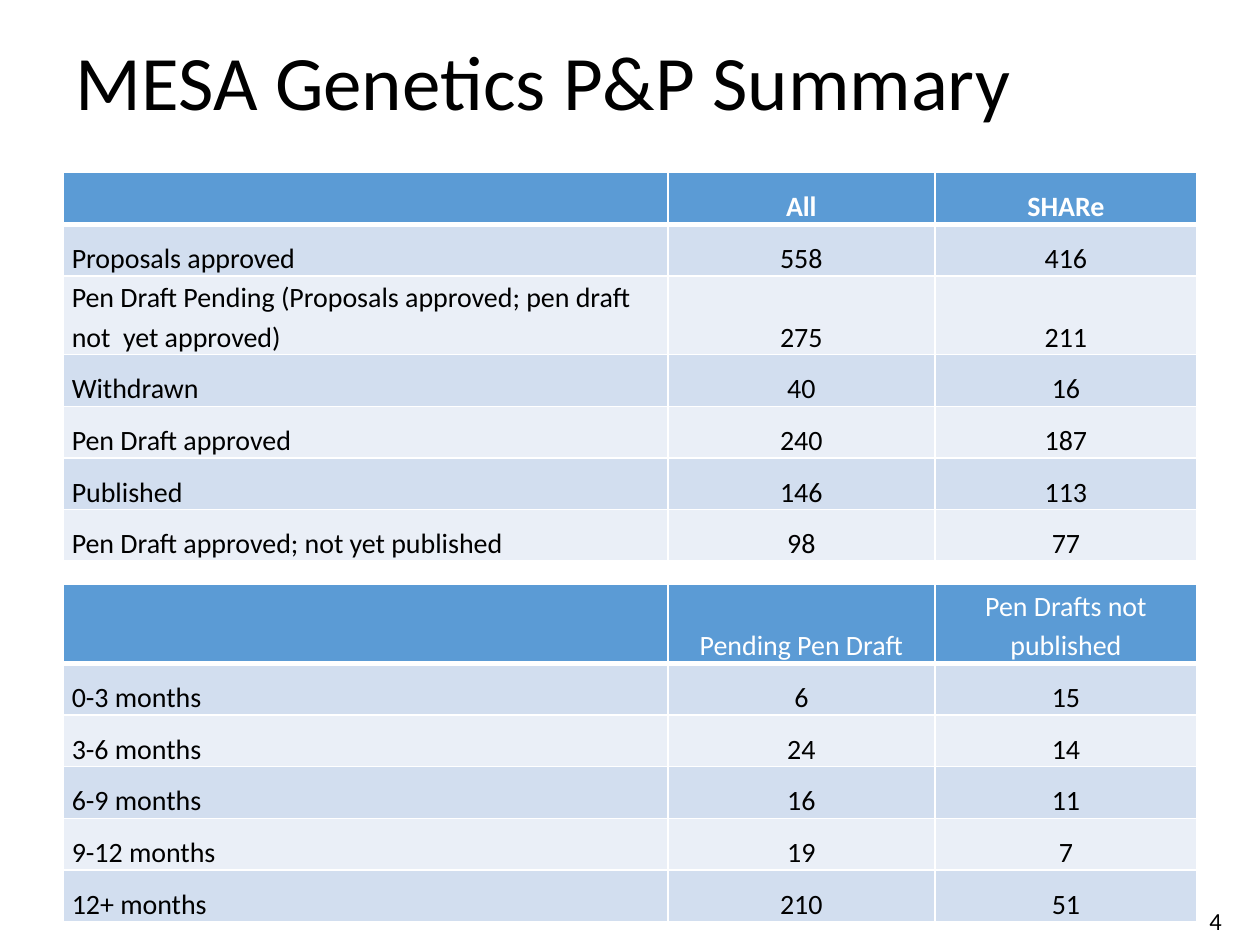
from dataclasses import dataclass

from lxml.etree import SubElement
from pptx import Presentation
from pptx.dml.color import RGBColor
from pptx.enum.text import MSO_ANCHOR, PP_ALIGN
from pptx.oxml.ns import qn
from pptx.util import Inches, Pt

# Content
TITLE = "MESA Genetics P&P Summary"
PAGE_NUMBER = "4"
STATUS_ROWS = [
    ("", "All", "SHARe"),
    ("Proposals approved", "558", "416"),
    ("Pen Draft Pending (Proposals approved; pen draft not  yet approved)", "275", "211"),
    ("Withdrawn", "40", "16"),
    ("Pen Draft approved", "240", "187"),
    ("Published", "146", "113"),
    ("Pen Draft approved; not yet published", "98", "77"),
]
AGE_ROWS = [
    ("", "Pending Pen Draft", "Pen Drafts not published"),
    ("0-3 months", "6", "15"),
    ("3-6 months", "24", "14"),
    ("6-9 months", "16", "11"),
    ("9-12 months", "19", "7"),
    ("12+ months", "210", "51"),
]


@dataclass(frozen=True)
class Theme:
    font: str = "Calibri"
    title_size: int = 44
    table_size: int = 16
    number_size: int = 14
    ink: str = "000000"
    paper: str = "FFFFFF"
    header: str = "5B9BD5"
    bands: tuple = ("D2DEEF", "EAEFF7")
    rule: int = 1
    header_rule: int = 3


THEME = Theme()

# Grid, in inches
MARGIN = 0.5
COLUMNS = (4.8, 2.12, 2.08)
ROW_HEIGHT = 0.41
TABLE_WIDTH = sum(COLUMNS)


def style_text(frame, size, color, bold=False):
    for para in frame.paragraphs:
        for span in para.runs:
            span.font.name = THEME.font
            span.font.size = Pt(size)
            span.font.bold = bold
            span.font.color.rgb = RGBColor.from_string(color)


def add_borders(cell, bottom_width):
    properties = cell._tc.get_or_add_tcPr()
    for side in ("lnL", "lnR", "lnT", "lnB"):
        width = bottom_width if side == "lnB" else THEME.rule
        line = SubElement(properties, qn(f"a:{side}"), w=str(Pt(width)))
        fill = SubElement(line, qn("a:solidFill"))
        SubElement(fill, qn("a:srgbClr"), val=THEME.paper)


def style_cell(cell, text, row, column, bold_header):
    is_header = row == 0
    add_borders(cell, THEME.header_rule if is_header else THEME.rule)
    background = THEME.header if is_header else THEME.bands[(row - 1) % 2]
    cell.fill.solid()
    cell.fill.fore_color.rgb = RGBColor.from_string(background)
    cell.margin_left = cell.margin_right = Inches(0.07)
    cell.margin_top = cell.margin_bottom = 0
    cell.vertical_anchor = MSO_ANCHOR.BOTTOM
    cell.text_frame.text = text
    para = cell.text_frame.paragraphs[0]
    para.line_spacing = 1.15
    para.alignment = PP_ALIGN.CENTER if column else PP_ALIGN.LEFT
    style_text(cell.text_frame, THEME.table_size,
               THEME.paper if is_header else THEME.ink, is_header and bold_header)


def add_summary_table(slide, rows, top, bold_header):
    table = slide.shapes.add_table(
        len(rows), len(COLUMNS), Inches(MARGIN), Inches(top),
        Inches(TABLE_WIDTH), Inches(ROW_HEIGHT * len(rows))).table
    for column, width in zip(table.columns, COLUMNS):
        column.width = Inches(width)
    for row, texts in enumerate(rows):
        table.rows[row].height = Inches(ROW_HEIGHT)
        for column, text in enumerate(texts):
            style_cell(table.cell(row, column), text, row, column, bold_header)


def main():
    deck = Presentation()
    deck.slide_width, deck.slide_height = Inches(10), Inches(7.5)
    slide = deck.slides.add_slide(deck.slide_layouts[5])

    # Title
    title = slide.shapes.title
    title.left, title.top = Inches(MARGIN), Inches(0.3)
    title.width, title.height = Inches(TABLE_WIDTH), Inches(1.25)
    title.text_frame.text = TITLE
    title.text_frame.vertical_anchor = MSO_ANCHOR.TOP
    heading = title.text_frame.paragraphs[0]
    heading.alignment = PP_ALIGN.LEFT
    heading.line_spacing = 0.9
    style_text(title.text_frame, THEME.title_size, THEME.ink)

    # Tables
    add_summary_table(slide, STATUS_ROWS, top=1.37, bold_header=True)
    add_summary_table(slide, AGE_ROWS, top=4.64, bold_header=False)

    # Page number
    number = slide.shapes.add_textbox(Inches(9.5), Inches(7.14), Inches(0.3), Inches(0.34))
    number.text_frame.word_wrap = False
    number.text_frame.text = PAGE_NUMBER
    style_text(number.text_frame, THEME.number_size, THEME.ink)

    deck.save("out.pptx")


if __name__ == "__main__":
    main()
